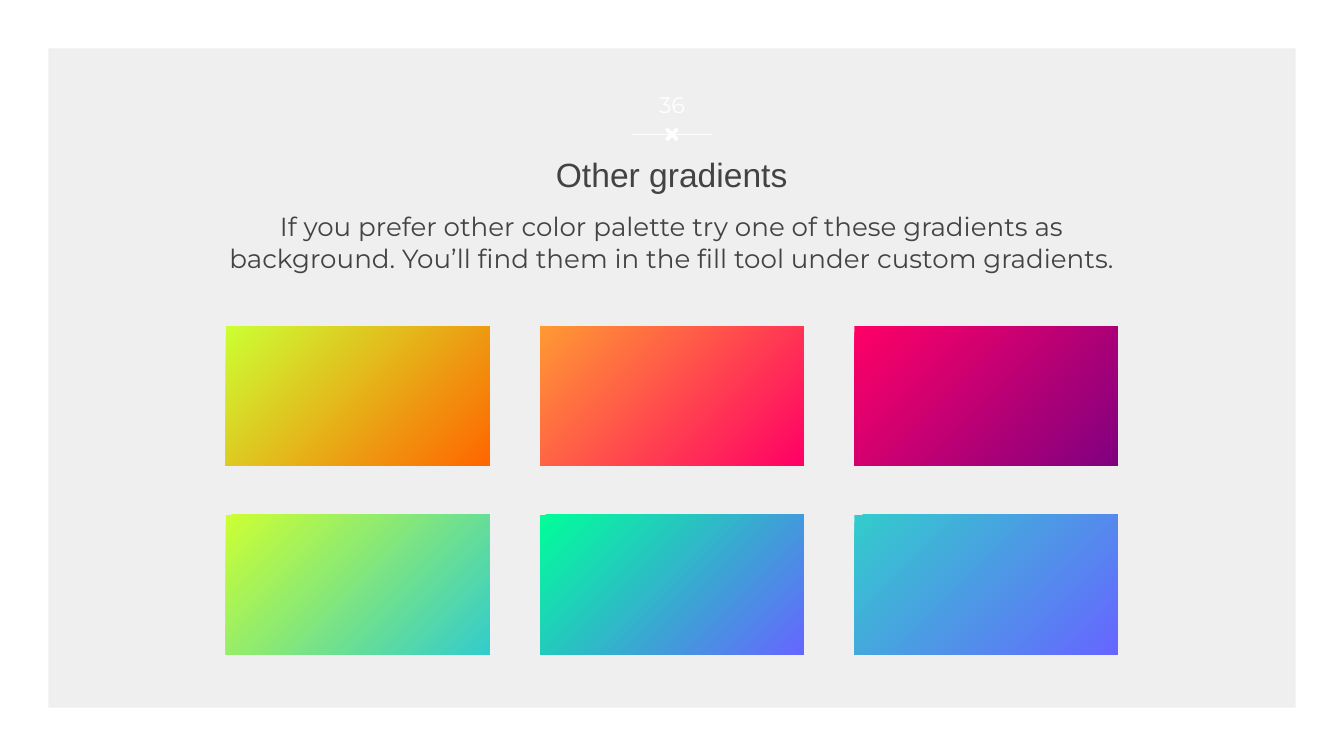
from lxml.etree import SubElement
from pptx import Presentation
from pptx.dml.color import RGBColor
from pptx.enum.shapes import MSO_CONNECTOR, MSO_SHAPE
from pptx.enum.text import MSO_ANCHOR, PP_ALIGN
from pptx.oxml.ns import qn
from pptx.util import Cm, Pt

WIDTH, HEIGHT = 25.4, 14.29
WHITE, GRAY, TEXT = "FFFFFF", "EFEFEF", "434343"
SWATCH_LEFT, SWATCH_TOP = 4.27, 6.17
SWATCH_WIDTH, SWATCH_HEIGHT = 4.98, 2.64
COLUMN_STEP, ROW_STEP = 5.94, 3.56
GRADIENTS = [
    [("CCFF33", "FF6600"), ("FF9933", "FF0066"), ("FF0066", "800080")],
    [("CCFF33", "33CCCC"), ("00FF99", "6666FF"), ("33CCCC", "6666FF")],
]


def color(value):
    """Turn a hex string into a colour."""
    return RGBColor.from_string(value)


def add_plain_shape(slide, kind, left, top, width, height):
    """Add a preset shape without outline or shadow."""
    shape = slide.shapes.add_shape(kind, Cm(left), Cm(top), Cm(width), Cm(height))
    shape.shadow.inherit = False
    shape.line.fill.background()
    return shape


def add_white_shape(slide, kind, left, top, width, height, adjustment):
    """Add a white shape with one adjustment."""
    shape = add_plain_shape(slide, kind, left, top, width, height)
    shape.adjustments[0] = adjustment
    shape.fill.solid()
    shape.fill.fore_color.rgb = color(WHITE)


def add_rule(slide, left, right, top):
    """Add a thin white horizontal line."""
    connector = slide.shapes.add_connector(
        MSO_CONNECTOR.STRAIGHT, Cm(left), Cm(top), Cm(right), Cm(top))
    connector.line.color.rgb = color(WHITE)
    connector.line.width = Pt(0.75)
    SubElement(connector._element.spPr, qn("a:effectLst"))


def add_text(slide, text, left, top, width, height, size, font_name, font_color,
             anchor=MSO_ANCHOR.MIDDLE):
    """Add a centred paragraph in a wrapping text box."""
    box = slide.shapes.add_textbox(Cm(left), Cm(top), Cm(width), Cm(height))
    text_frame = box.text_frame
    text_frame.word_wrap = True
    text_frame.vertical_anchor = anchor
    text_frame.margin_left = text_frame.margin_right = Cm(0.25)
    text_frame.margin_top = text_frame.margin_bottom = Cm(0.25)
    text_frame.text = text
    paragraph = text_frame.paragraphs[0]
    paragraph.alignment = PP_ALIGN.CENTER
    font = paragraph.runs[0].font
    font.size = Pt(size)
    font.name = font_name
    font.color.rgb = color(font_color)


def add_swatch(slide, column, row, colors):
    """Add a rectangle with a diagonal gradient at a grid position."""
    shape = add_plain_shape(
        slide, MSO_SHAPE.RECTANGLE,
        SWATCH_LEFT + column * COLUMN_STEP, SWATCH_TOP + row * ROW_STEP,
        SWATCH_WIDTH, SWATCH_HEIGHT)
    shape.fill.gradient()
    shape.fill.gradient_angle = 315
    for position, (stop, value) in enumerate(zip(shape.fill.gradient_stops, colors)):
        stop.color.rgb = color(value)
        stop.position = position


def main():
    """Build the gradient slide and save it."""
    presentation = Presentation()
    presentation.slide_width, presentation.slide_height = Cm(WIDTH), Cm(HEIGHT)
    slide = presentation.slides.add_slide(presentation.slide_layouts[6])
    slide.background.fill.solid()
    slide.background.fill.fore_color.rgb = color(GRAY)

    add_white_shape(slide, MSO_SHAPE.FRAME, 0, 0, WIDTH, HEIGHT, 0.064)
    add_rule(slide, 11.94, 13.46, 2.54)
    add_white_shape(slide, MSO_SHAPE.MATH_MULTIPLY, 12.5, 2.34, 0.4, 0.4, 0.174)
    add_text(slide, "36", 11.7, 1.48, 2, 1, 12, "Montserrat", WHITE)
    add_text(slide, "Other gradients", 0.91, 2.74, 23.57, 1.09, 18, "Arial", TEXT)
    add_text(slide, "If you prefer other color palette try one of these gradients as "
             "background. You’ll find them in the fill tool under custom gradients.",
             3.96, 3.73, 17.48, 2.72, 14, "Montserrat", TEXT, MSO_ANCHOR.TOP)
    for row, gradients in enumerate(GRADIENTS):
        for column, colors in enumerate(gradients):
            add_swatch(slide, column, row, colors)

    presentation.save("out.pptx")


if __name__ == "__main__":
    main()
